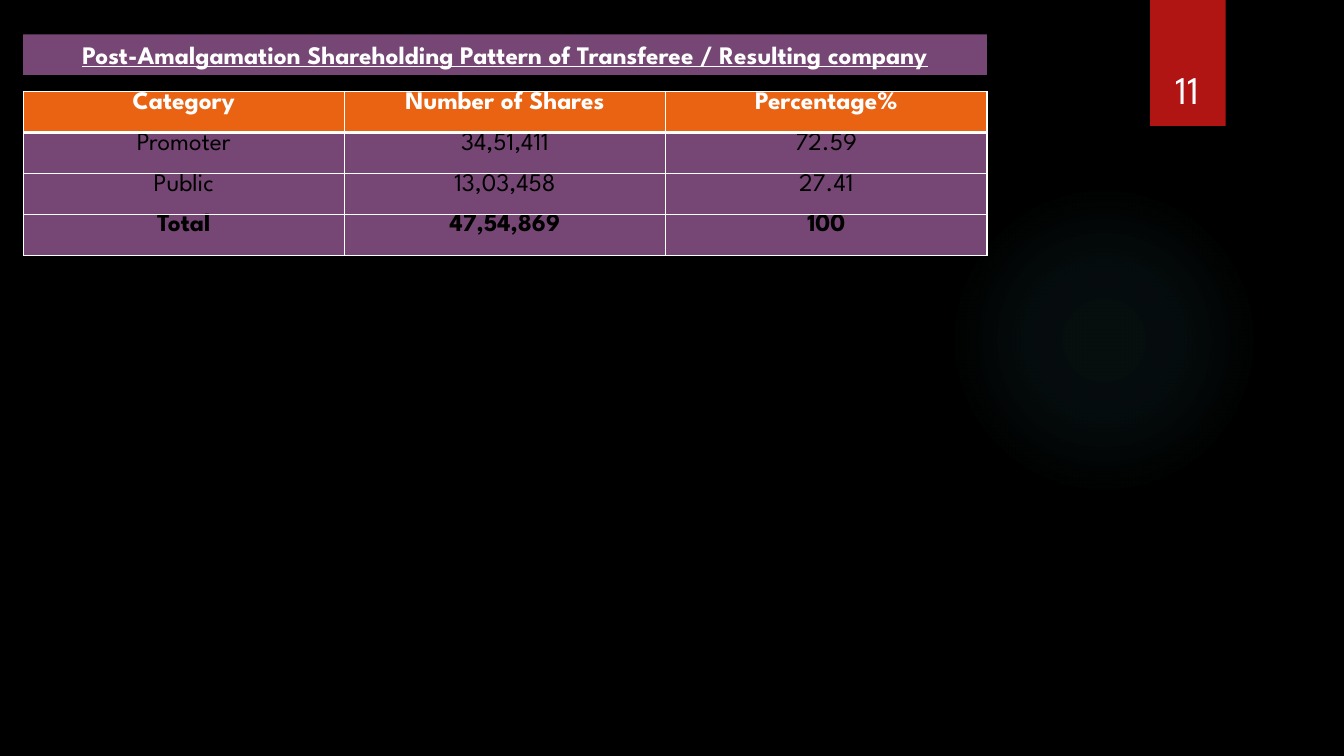
from lxml import etree
from pptx import Presentation
from pptx.dml.color import RGBColor
from pptx.enum import shapes, text
from pptx.oxml import ns, parse_xml
from pptx.util import Pt

COLORS = {
    "black": "000000", "white": "FFFFFF", "purple": "764674",
    "orange": "EA6312", "red": "B01513", "glow": "50B9C1",
}
FONT = "League Spartan"
LEFT, WIDTH = 16.5, 688.5
ROW_HEIGHT = 29.2


def add_panel(kind, left, top, width, height, color):
    """Add a borderless, shadowless shape filled with a named colour."""
    shape = slide.shapes.add_shape(kind, Pt(left), Pt(top), Pt(width), Pt(height))
    shape.shadow.inherit = False
    shape.fill.solid()
    shape.fill.fore_color.rgb = RGBColor.from_string(COLORS[color])
    shape.line.fill.background()
    return shape


def write(frame, words, size, color="white", bold=False):
    """Write one centred paragraph into a text frame."""
    paragraph = frame.paragraphs[0]
    paragraph.text = words
    paragraph.alignment = text.PP_ALIGN.CENTER
    font = paragraph.font
    font.name, font.size, font.bold = FONT, Pt(size), bold
    font.color.rgb = RGBColor.from_string(COLORS[color])
    return paragraph


presentation = Presentation()
presentation.slide_width, presentation.slide_height = Pt(960), Pt(540)
slide = presentation.slides.add_slide(presentation.slide_layouts[6])
slide.background.fill.solid()
slide.background.fill.fore_color.rgb = RGBColor.from_string(COLORS["black"])

# Soft glow, fading outwards
glow = add_panel(shapes.MSO_SHAPE.OVAL, 677.5, 131.8, 221.8, 221.8, "glow")
stops = "".join(
    f'<a:gs pos="{position * 1000}"><a:srgbClr val="{COLORS["glow"]}">'
    f'<a:alpha val="{alpha * 1000}"/></a:srgbClr></a:gs>'
    for position, alpha in [(0, 7), (36, 6), (69, 0)]
)
gradient = parse_xml(
    f'<a:gradFill {ns.nsdecls("a")}><a:gsLst>{stops}</a:gsLst><a:path path="circle">'
    '<a:fillToRect l="50000" t="50000" r="50000" b="50000"/></a:path></a:gradFill>'
)
properties = glow.element.spPr
properties.replace(properties.find(ns.qn("a:solidFill")), gradient)

# Page number on its red tab
add_panel(shapes.MSO_SHAPE.RECTANGLE, 821.5, 0, 54, 90, "red")
number = slide.shapes.add_textbox(Pt(815), Pt(23), Pt(66), Pt(60.5)).text_frame
number.word_wrap = True
number.vertical_anchor = text.MSO_ANCHOR.BOTTOM
write(number, "11", 28)

# Title bar
title = add_panel(shapes.MSO_SHAPE.RECTANGLE, LEFT, 24.5, WIDTH, 29, "purple").text_frame
title.word_wrap = True
title.vertical_anchor = text.MSO_ANCHOR.TOP
heading = "Post-Amalgamation Shareholding Pattern of Transferee / Resulting company"
write(title, heading, 18, bold=True).font.underline = True

# Shareholding table
rows = [
    ("Category", "Number of Shares", "Percentage%"),
    ("Promoter", "34,51,411", "72.59"),
    ("Public", "13,03,458", "27.41"),
    ("Total", "47,54,869", "100"),
]
table = slide.shapes.add_table(
    len(rows), 3, Pt(LEFT), Pt(65.5), Pt(WIDTH), Pt(ROW_HEIGHT * len(rows))
).table
for column in table.columns:
    column.width = Pt(WIDTH / 3)
for row_index, values in enumerate(rows):
    table.rows[row_index].height = Pt(ROW_HEIGHT)
    header = row_index == 0
    for column_index, value in enumerate(values):
        cell = table.cell(row_index, column_index)
        cell.margin_top = cell.margin_bottom = 0
        write(cell.text_frame, value, 18, "white" if header else "black",
              bold=row_index in (0, len(rows) - 1))
        cell_properties = cell._tc.get_or_add_tcPr()
        for side in "LRTB":
            thick = (side, row_index) in (("B", 0), ("T", 1))
            border = etree.SubElement(
                cell_properties, ns.qn(f"a:ln{side}"), w=str(Pt(3 if thick else 1)))
            fill = etree.SubElement(border, ns.qn("a:solidFill"))
            etree.SubElement(fill, ns.qn("a:srgbClr"), val=COLORS["white"])
        cell.fill.solid()
        cell.fill.fore_color.rgb = RGBColor.from_string(
            COLORS["orange" if header else "purple"])

presentation.save("out.pptx")
